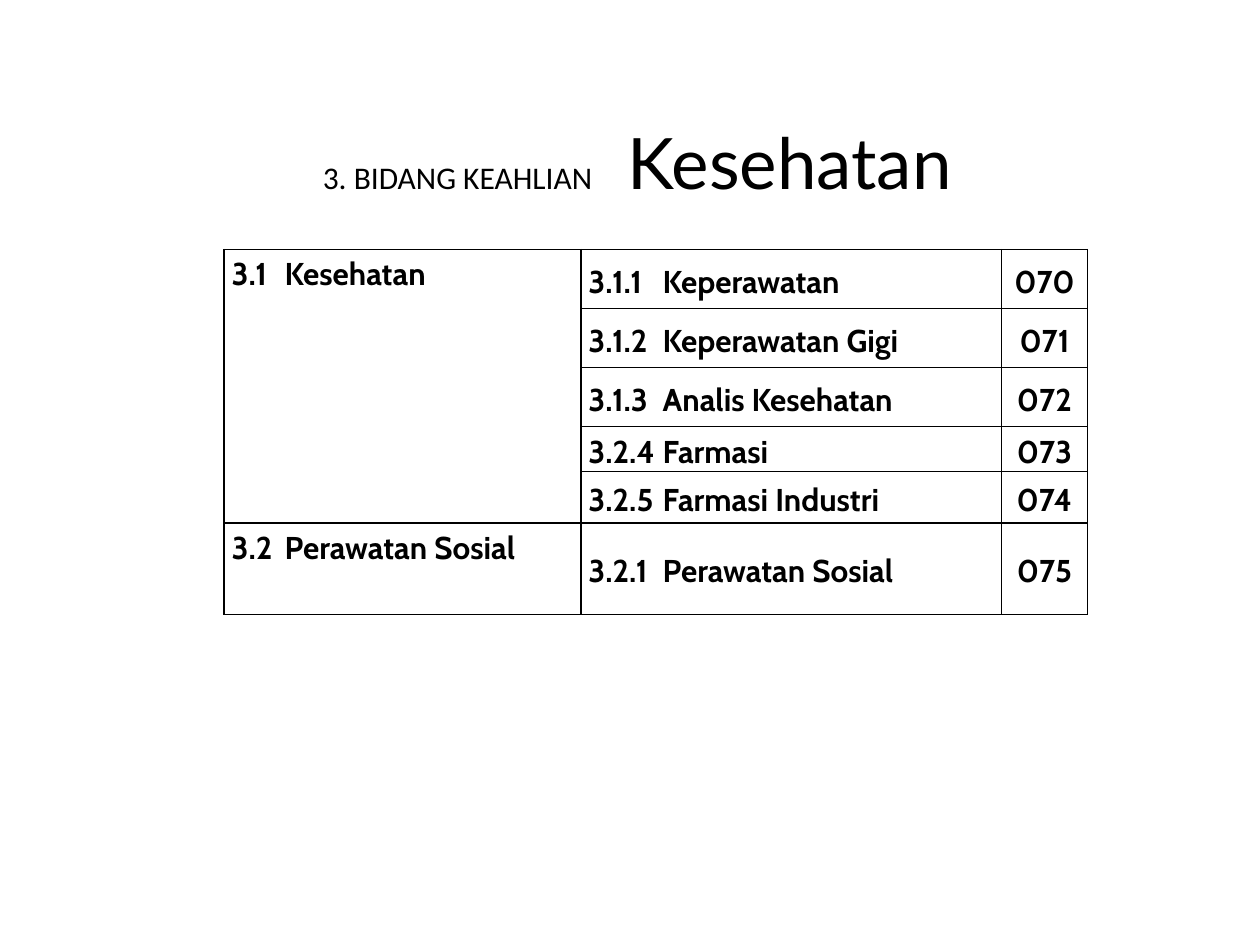
import pptx
import pptx.dml.color
import pptx.enum.text
import pptx.oxml
import pptx.oxml.ns
import pptx.util

Cm = pptx.util.Cm
Pt = pptx.util.Pt
Align = pptx.enum.text.PP_ALIGN
Anchor = pptx.enum.text.MSO_ANCHOR

COLORS = {"text": "000000", "border": "000000"}

COLUMN_WIDTHS = [7.19, 8.48, 1.73]
ROW_HEIGHTS = [1.19, 1.19, 1.19, 0.9, 1.04, 1.85]
HANGING_INDENTS = [1.07, 1.5]

# Field of study -> (number, programme, code)
FIELDS = [
    ("3.1\tKesehatan", [
        ("3.1.1\tKeperawatan", "070"),
        ("3.1.2\tKeperawatan Gigi", "071"),
        ("3.1.3\tAnalis Kesehatan", "072"),
        ("3.2.4\tFarmasi", "073"),
        ("3.2.5\tFarmasi Industri", "074"),
    ]),
    ("3.2\tPerawatan Sosial", [("3.2.1\tPerawatan Sosial", "075")]),
]


def apply_format(target, values):
    for name, value in values.items():
        setattr(target, name, value)


def add_run(paragraph, text, **font_values):
    run = paragraph.add_run()
    run.text = text
    apply_format(run.font, font_values)
    run.font.color.rgb = pptx.dml.color.RGBColor.from_string(COLORS["text"])
    return run


def add_title(slide, left, top, width, height):
    shape = slide.shapes.add_textbox(Cm(left), Cm(top), Cm(width), Cm(height))
    apply_format(shape.text_frame, {
        "word_wrap": True,
        "auto_size": pptx.enum.text.MSO_AUTO_SIZE.NONE,
        "vertical_anchor": Anchor.MIDDLE,
    })
    paragraph = shape.text_frame.paragraphs[0]
    paragraph.alignment = Align.CENTER
    add_run(paragraph, "3. BIDANG KEAHLIAN", size=Pt(18), name="Calibri")
    # One space, widened by letter spacing
    gap = add_run(paragraph, " ", size=Pt(44), name="Calibri")
    gap.font._element.set("spc", "1000")
    add_run(paragraph, "Kesehatan", size=Pt(40.5), name="Lato")


def set_borders(cell):
    properties = cell._tc.get_or_add_tcPr()
    for position, side in enumerate(("lnL", "lnR", "lnT", "lnB")):
        line = pptx.oxml.parse_xml(
            f'<a:{side} {pptx.oxml.ns.nsdecls("a")} w="{Pt(1)}"><a:solidFill>'
            f'<a:srgbClr val="{COLORS["border"]}"/></a:solidFill></a:{side}>'
        )
        properties.insert(position, line)


def fill_cell(cell, text, column):
    paragraph = cell.text_frame.paragraphs[0]
    paragraph.line_spacing = 1.15
    if column < len(HANGING_INDENTS):
        indent = Cm(HANGING_INDENTS[column])
        properties = paragraph._p.get_or_add_pPr()
        properties.set("marL", str(indent))
        properties.set("indent", str(-indent))
    else:
        paragraph.alignment = Align.CENTER
    add_run(paragraph, text, size=Pt(18), name="Cabin", bold=True)
    cell.vertical_anchor = Anchor.MIDDLE if column else Anchor.TOP


def add_field_table(slide, left, top):
    frame = slide.shapes.add_table(
        len(ROW_HEIGHTS), len(COLUMN_WIDTHS), Cm(left), Cm(top),
        Cm(sum(COLUMN_WIDTHS)), Cm(sum(ROW_HEIGHTS)),
    )
    table = frame.table
    apply_format(table, {"first_row": False, "horz_banding": False})
    for column, width in zip(table.columns, COLUMN_WIDTHS):
        column.width = Cm(width)
    for row, height in zip(table.rows, ROW_HEIGHTS):
        row.height = Cm(height)

    # Plain bordered cells
    for cell in table.iter_cells():
        apply_format(cell, {
            "margin_left": Cm(0.15), "margin_right": Cm(0.15),
            "margin_top": 0, "margin_bottom": 0,
        })
        cell.fill.background()
        set_borders(cell)

    # Each field spans the rows of its programmes
    row = 0
    for field, programmes in FIELDS:
        last_row = row + len(programmes) - 1
        if last_row > row:
            table.cell(row, 0).merge(table.cell(last_row, 0))
        fill_cell(table.cell(row, 0), field, 0)
        for programme, code in programmes:
            fill_cell(table.cell(row, 1), programme, 1)
            fill_cell(table.cell(row, 2), code, 2)
            row += 1


def main():
    presentation = pptx.Presentation()
    presentation.slide_width = Cm(25.4)
    presentation.slide_height = Cm(19.05)
    slide = presentation.slides.add_slide(presentation.slide_layouts[6])
    add_title(slide, 3.81, 2.87, 18.08, 0.64)
    add_field_table(slide, 4.52, 5.03)
    presentation.save("out.pptx")


if __name__ == "__main__":
    main()
